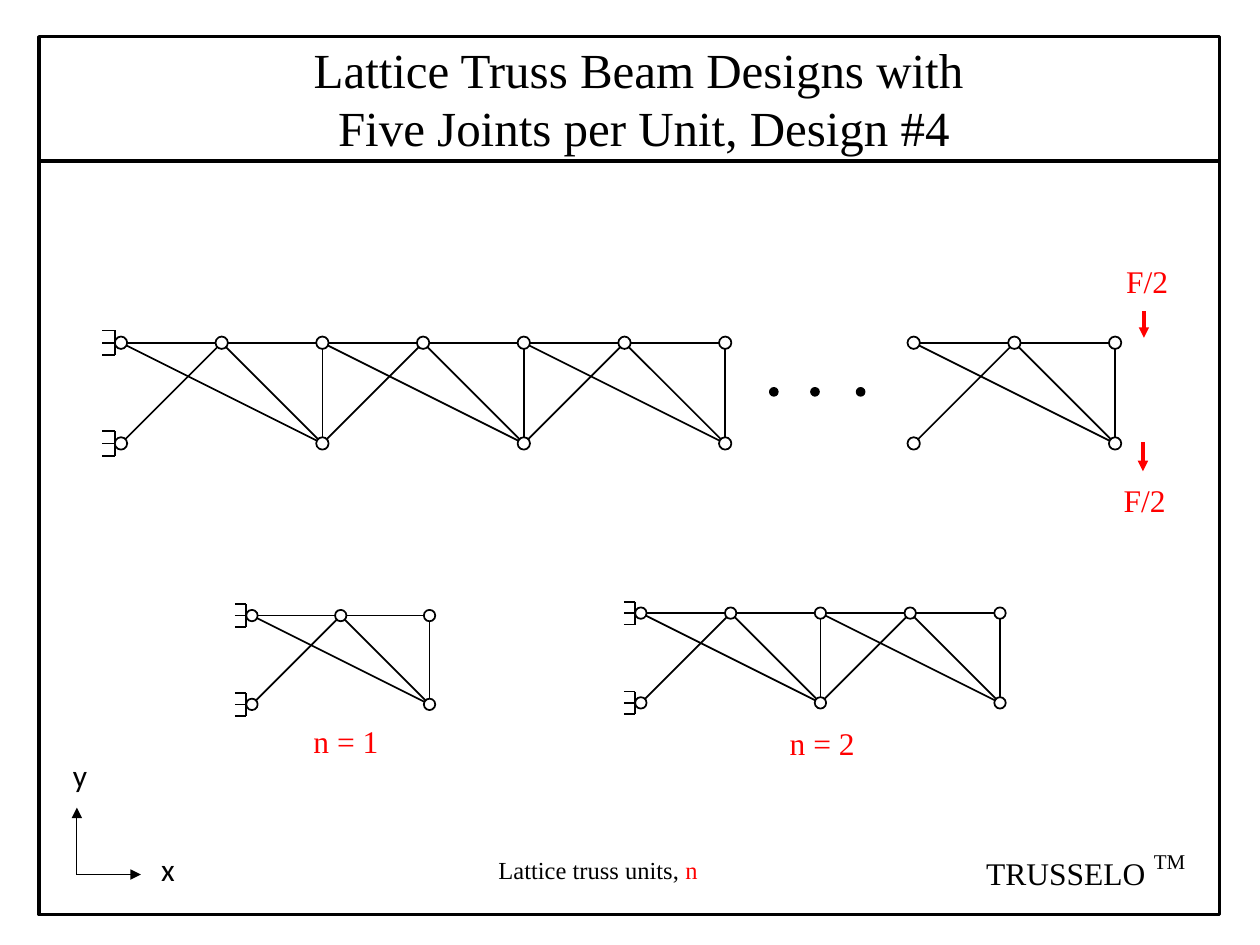
from pptx import Presentation
from pptx.dml.color import RGBColor
from pptx.enum.shapes import MSO_CONNECTOR as CONN, MSO_SHAPE as SHAPE
from pptx.enum.text import MSO_ANCHOR, MSO_AUTO_SIZE, PP_ALIGN
from pptx.oxml.ns import qn
from pptx.util import Cm, Pt
from lxml.etree import SubElement

THEME = {
    "black": RGBColor(0, 0, 0), "white": RGBColor(255, 255, 255),
    "red": RGBColor(255, 0, 0),
    "serif": "Times New Roman", "sans": "Calibri",
    "title": 28, "label": 18, "caption": 14, "mark": 12,
    "axis": 0.5, "member": 1, "heavy": 2,
}

# Content (lengths in cm)
TITLE = ["Lattice Truss Beam Designs with", "Five Joints per Unit, Design #4"]
# left, top, units, joint spacing, joint diameter, supported
TRUSSES = [
    (2.44, 6.91, 3, 2.03, 0.25, True),
    (18.42, 6.91, 1, 2.03, 0.25, False),
    (5.08, 12.41, 1, 1.79, 0.23, True),
    (12.92, 12.36, 2, 1.81, 0.23, True),
]
# Members of one unit, between joints given as (column, row)
UNIT_MEMBERS = [
    ((0, 0), (1, 0)), ((1, 0), (2, 0)), ((0, 1), (1, 0)),
    ((1, 0), (2, 1)), ((0, 0), (2, 1)), ((2, 0), (2, 1)),
]
DOTS, DOT_Y, DOT_SIZE = (15.6, 16.43, 17.35), 7.9, 0.16
# start, end, colour, width
ARROWS = [
    ((23.06, 6.27), (23.06, 6.81), "red", "heavy"),
    ((23.04, 8.92), (23.04, 9.5), "red", "heavy"),
    ((1.55, 17.63), (2.84, 17.63), "black", "axis"),
    ((1.55, 17.63), (1.55, 16.28), "black", "axis"),
]
# left, top, width, font, size, runs of (text, colour)
LABELS = [
    (22.45, 5.16, 1.6, "serif", "label", [("F/2", "red")]),
    (22.4, 9.58, 1.6, "serif", "label", [("F/2", "red")]),
    (3, 17.02, 1, "sans", "label", [("x", "black")]),
    (1.22, 15.11, 1, "sans", "label", [("y", "black")]),
    (6.07, 14.43, 2.2, "serif", "label", [("n = 1", "red")]),
    (15.67, 14.48, 2.2, "serif", "label", [("n = 2", "red")]),
    (9.8, 17.12, 5.2, "serif", "caption",
     [("Lattice truss units, ", "black"), ("n", "red")]),
    (19.63, 17.09, 4, "serif", "label", [("TRUSSELO", "black")]),
    (23.01, 16.99, 1.3, "serif", "mark", [("TM", "black")]),
]
FRAME = (0.79, 0.74, 23.8, 17.7)
DIVIDER_Y = 3.25

prs = Presentation()
prs.slide_width, prs.slide_height = Cm(25.4), Cm(19.05)
slide = prs.slides.add_slide(prs.slide_layouts[5])


def add_line(start, end, color="black", width="member", arrow=False):
    c = slide.shapes.add_connector(CONN.STRAIGHT, *map(Cm, (*start, *end)))
    c.line.color.rgb = THEME[color]
    c.line.width = Pt(THEME[width])
    if arrow:
        SubElement(c.line._get_or_add_ln(), qn("a:tailEnd"), type="triangle")
    SubElement(c._element.spPr, qn("a:effectLst"))


def add_shape(kind, box, fill=None, width="member"):
    s = slide.shapes.add_shape(kind, *map(Cm, box))
    s.shadow.inherit = False
    if fill:
        s.fill.solid()
        s.fill.fore_color.rgb = THEME[fill]
    else:
        s.fill.background()
    s.line.color.rgb = THEME["black"]
    s.line.width = Pt(THEME[width])


def add_circle(x, y, size, fill):
    add_shape(SHAPE.OVAL, (x - size / 2, y - size / 2, size, size), fill)


def add_support(x, y, size):
    wall = x - size / 2
    add_line((wall, y - size), (wall, y + size))
    for dy in (-size, 0, size):
        add_line((wall - size, y + dy), (wall, y + dy))


def add_truss(left, top, units, pitch, size, supported):
    def place(col, row):
        return left + col * pitch, top + row * pitch

    for unit in range(units):
        for (c1, r1), (c2, r2) in UNIT_MEMBERS:
            add_line(place(c1 + 2 * unit, r1), place(c2 + 2 * unit, r2))
    if supported:
        for row in (0, 1):
            add_support(*place(0, row), size)
    last = 2 * units
    joints = [(c, 0) for c in range(last + 1)]
    joints += [(c, 1) for c in range(0, last + 1, 2)]
    for joint in joints:
        add_circle(*place(*joint), size, "white")


# Frame and title
add_shape(SHAPE.RECTANGLE, FRAME, width="heavy")
add_line((FRAME[0], DIVIDER_Y), (FRAME[0] + FRAME[2], DIVIDER_Y), width="heavy")

title = slide.shapes.title
title.left, title.top, title.width, title.height = map(Cm, (6.07, 0.66, 14.45, 2.64))
tf = title.text_frame
tf.text = "\n".join(TITLE)
tf.auto_size = MSO_AUTO_SIZE.NONE
tf.vertical_anchor = MSO_ANCHOR.TOP
for p in tf.paragraphs:
    p.alignment = PP_ALIGN.LEFT
    p.space_before = Pt(0)
    p.font.name, p.font.size = THEME["serif"], Pt(THEME["title"])
    p.font.color.rgb = THEME["black"]
tf.paragraphs[1]._p.get_or_add_pPr().set("marL", str(Cm(0.49)))

# Trusses, continuation dots, loads and axes
for truss in TRUSSES:
    add_truss(*truss)
for x in DOTS:
    add_circle(x, DOT_Y, DOT_SIZE, "black")
for arrow in ARROWS:
    add_line(*arrow, arrow=True)

# Labels
for left, top, width, font, size, runs in LABELS:
    tf = slide.shapes.add_textbox(*map(Cm, (left, top, width, 1.02))).text_frame
    tf.word_wrap = True
    p = tf.paragraphs[0]
    p.font.name, p.font.size = THEME[font], Pt(THEME[size])
    for text, color in runs:
        r = p.add_run()
        r.text = text
        r.font.color.rgb = THEME[color]

prs.save("out.pptx")
